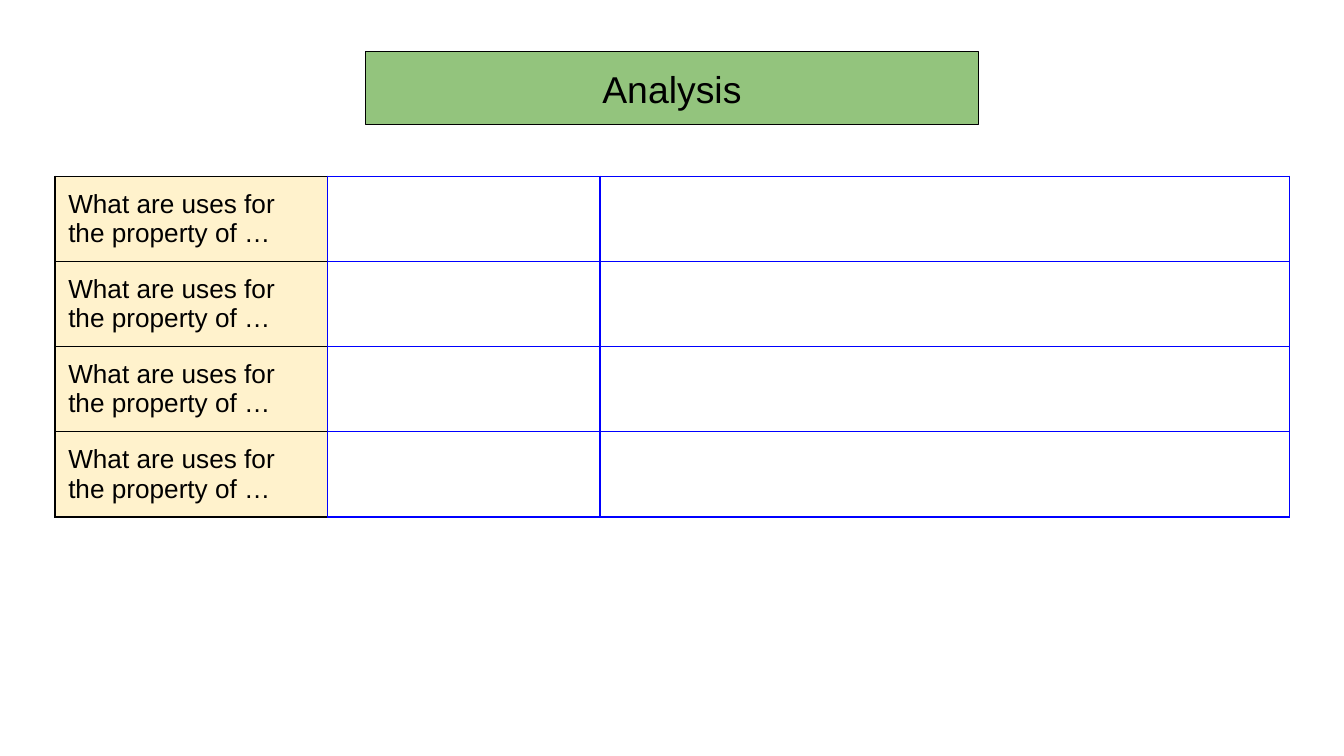
from lxml import etree
from pptx import Presentation
from pptx.dml.color import RGBColor
from pptx.enum.shapes import MSO_SHAPE
from pptx.enum.text import MSO_ANCHOR, MSO_AUTO_SIZE, PP_ALIGN
from pptx.oxml.ns import qn
from pptx.util import Cm, Pt

RECT = MSO_SHAPE.RECTANGLE
MIDDLE = MSO_ANCHOR.MIDDLE
FIT_SHAPE = MSO_AUTO_SIZE.SHAPE_TO_FIT_TEXT
CENTER = PP_ALIGN.CENTER

BLACK, BLUE = "000000", "0000FF"
GREEN, CREAM = "93C47D", "FFF2CC"


def color(value):
    return RGBColor.from_string(value)


class Sheet:
    font = "Arial"
    line = Pt(0.75)
    margin = Cm(0.25)

    def __init__(self, slide):
        self.s = slide

    def add_run(self, p, text, size):
        r = p.add_run()
        r.text = text
        r.font.name = self.font
        r.font.size = Pt(size)
        r.font.color.rgb = color(BLACK)

    def set_margins(self, target):
        target.margin_left = target.margin_right = self.margin
        target.margin_top = target.margin_bottom = self.margin

    def box(self, text, x, y, w, h, fill, size):
        sp = self.s.shapes.add_shape(RECT, Cm(x), Cm(y), Cm(w), Cm(h))
        sp.shadow.inherit = False
        sp.fill.solid()
        sp.fill.fore_color.rgb = color(fill)
        sp.line.color.rgb = color(BLACK)
        sp.line.width = self.line
        tf = sp.text_frame
        tf.word_wrap = True
        tf.auto_size = FIT_SHAPE
        tf.vertical_anchor = MIDDLE
        self.set_margins(tf)
        p = tf.paragraphs[0]
        p.alignment = CENTER
        self.add_run(p, text, size)

    def borders(self, cell, sides):
        # Border lines come before the fill, in the order L, R, T, B
        tc_pr = cell._tc.get_or_add_tcPr()
        for i, (side, value) in enumerate(sides.items()):
            ln = etree.Element(qn(f"a:ln{side}"), w=str(self.line))
            fill = etree.SubElement(ln, qn("a:solidFill"))
            etree.SubElement(fill, qn("a:srgbClr"), val=value)
            tc_pr.insert(i, ln)

    def table(self, labels, x, y, widths, row_height, fill, size):
        frame = self.s.shapes.add_table(
            len(labels), len(widths), Cm(x), Cm(y),
            Cm(sum(widths)), Cm(row_height * len(labels)))
        table = frame.table
        table.first_row = table.horz_banding = False
        for column, width in zip(table.columns, widths):
            column.width = Cm(width)
        for row, label in zip(table.rows, labels):
            row.height = Cm(row_height)
            for i, cell in enumerate(row.cells):
                self.set_margins(cell)
                edge = BLUE
                if i == 0:
                    edge = BLACK
                    cell.fill.solid()
                    cell.fill.fore_color.rgb = color(fill)
                    self.add_run(cell.text_frame.paragraphs[0], label, size)
                else:
                    cell.fill.background()
                self.borders(cell, {"L": edge, "R": BLUE, "T": edge, "B": edge})


def main():
    prs = Presentation()
    prs.slide_width, prs.slide_height = Cm(25.4), Cm(14.29)
    sheet = Sheet(prs.slides.add_slide(prs.slide_layouts[6]))

    # Question table: label column, two empty answer columns
    sheet.table(["What are uses for the property of …"] * 4,
                1.04, 3.33, [5.15, 5.15, 13.03], 1.07, CREAM, 14)

    # Heading
    sheet.box("Analysis", 6.91, 0.98, 11.58, 1.37, GREEN, 20)

    prs.save("out.pptx")


if __name__ == "__main__":
    main()
